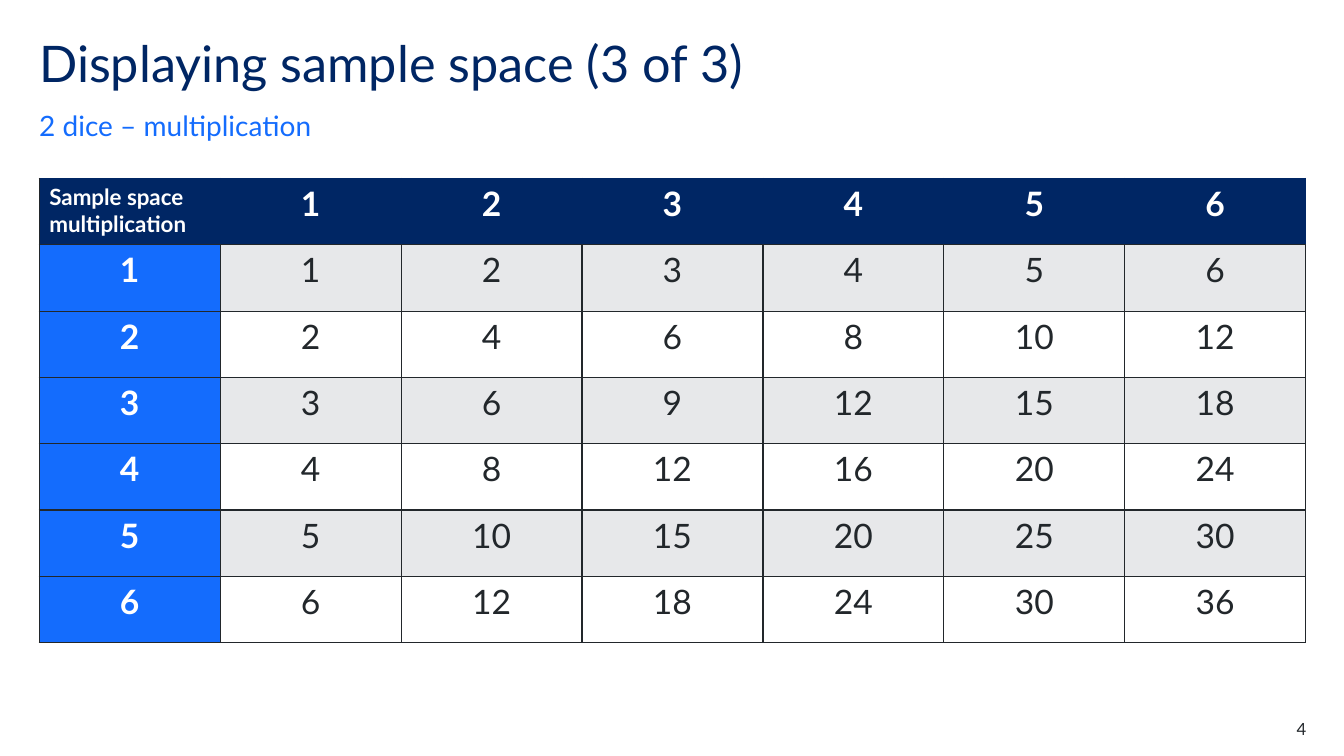
from lxml.etree import SubElement
from pptx import Presentation
from pptx.dml.color import RGBColor
from pptx.enum.text import MSO_ANCHOR, MSO_AUTO_SIZE, PP_ALIGN
from pptx.oxml.ns import qn
from pptx.util import Cm, Pt

TITLE = "Displaying sample space (3 of 3)"
SUBTITLE = "2 dice – multiplication"
CORNER = "Sample space multiplication"
PAGE_NUMBER = "4"
DICE = [1, 2, 3, 4, 5, 6]

COLORS = {
    "navy": "002664",
    "blue": "146CFD",
    "ink": "22272B",
    "grey": "E7E8EA",
    "white": "FFFFFF",
}
FONT = "Lato"
LEFT = 0.99
COLUMN_WIDTH, ROW_HEIGHT = 4.56, 1.67


def write(frame, text, size, color, bold=False, paragraph_format=None):
    paragraph = frame.paragraphs[0]
    paragraph.text = text
    for name, value in (paragraph_format or {}).items():
        setattr(paragraph, name, value)
    font = paragraph.runs[0].font
    for name, value in {"name": FONT, "size": Pt(size), "bold": bold}.items():
        setattr(font, name, value)
    font.color.rgb = RGBColor.from_string(COLORS[color])


def place(shape, left, top, width, height, anchor=MSO_ANCHOR.TOP):
    box = {"left": left, "top": top, "width": width, "height": height}
    for name, value in box.items():
        setattr(shape, name, Cm(value))
    frame = shape.text_frame
    frame_format = {
        "margin_left": 0, "margin_right": 0, "margin_top": 0, "margin_bottom": 0,
        "word_wrap": True, "auto_size": MSO_AUTO_SIZE.NONE, "vertical_anchor": anchor,
    }
    for name, value in frame_format.items():
        setattr(frame, name, value)
    return frame


def add_border(cell, side, color):
    properties = cell._tc.get_or_add_tcPr()
    line = SubElement(properties, qn(f"a:ln{side}"), w=str(Pt(1)))
    fill = SubElement(line, qn("a:solidFill"))
    SubElement(fill, qn("a:srgbClr"), val=COLORS[color])


def format_cell(cell, row, column, text):
    is_header, is_label = row == 0, column == 0
    for side in "LRTB":
        is_hidden = is_header and (side in "RT" or (side == "L" and not is_label))
        add_border(cell, side, "navy" if is_hidden else "ink")
    if is_header:
        fill = "navy"
    elif is_label:
        fill = "blue"
    else:
        fill = "grey" if row % 2 else "white"
    cell.fill.solid()
    cell.fill.fore_color.rgb = RGBColor.from_string(COLORS[fill])
    is_corner = is_header and is_label
    is_heading = is_header or is_label
    write(
        cell.text_frame, text, 16 if is_corner else 24,
        "white" if is_heading else "ink", is_heading,
        {"alignment": PP_ALIGN.LEFT if is_corner else PP_ALIGN.CENTER},
    )


def main():
    presentation = Presentation()
    presentation.slide_width, presentation.slide_height = Cm(33.87), Cm(19.05)
    slide = presentation.slides.add_slide(presentation.slide_layouts[5])

    frame = place(slide.shapes.title, LEFT, 0.99, 27.99, 1.52)
    write(frame, TITLE, 36, "navy", paragraph_format={
        "alignment": PP_ALIGN.LEFT, "line_spacing": 0.9})

    subtitle = slide.shapes.add_textbox(0, 0, 0, 0)
    frame = place(subtitle, LEFT, 2.72, 27.99, 0.86, MSO_ANCHOR.BOTTOM)
    write(frame, SUBTITLE, 20, "blue", paragraph_format={
        "line_spacing": 1.5, "space_after": Pt(12)})

    rows = [[CORNER, *DICE]] + [[a, *(a * b for b in DICE)] for a in DICE]
    table = slide.shapes.add_table(
        len(rows), len(rows[0]), Cm(LEFT), Cm(4.5),
        Cm(COLUMN_WIDTH * len(rows[0])), Cm(ROW_HEIGHT * len(rows)),
    ).table
    table.first_row = table.horz_banding = False
    for column in table.columns:
        column.width = Cm(COLUMN_WIDTH)
    for row_index, values in enumerate(rows):
        table.rows[row_index].height = Cm(ROW_HEIGHT)
        for column_index, value in enumerate(values):
            cell = table.cell(row_index, column_index)
            format_cell(cell, row_index, column_index, str(value))

    page_number = slide.shapes.add_textbox(0, 0, 0, 0)
    frame = place(page_number, 30.91, 18.11, 2.01, 0.51)
    write(frame, PAGE_NUMBER, 12, "ink", paragraph_format={"alignment": PP_ALIGN.RIGHT})

    presentation.save("out.pptx")


if __name__ == "__main__":
    main()
